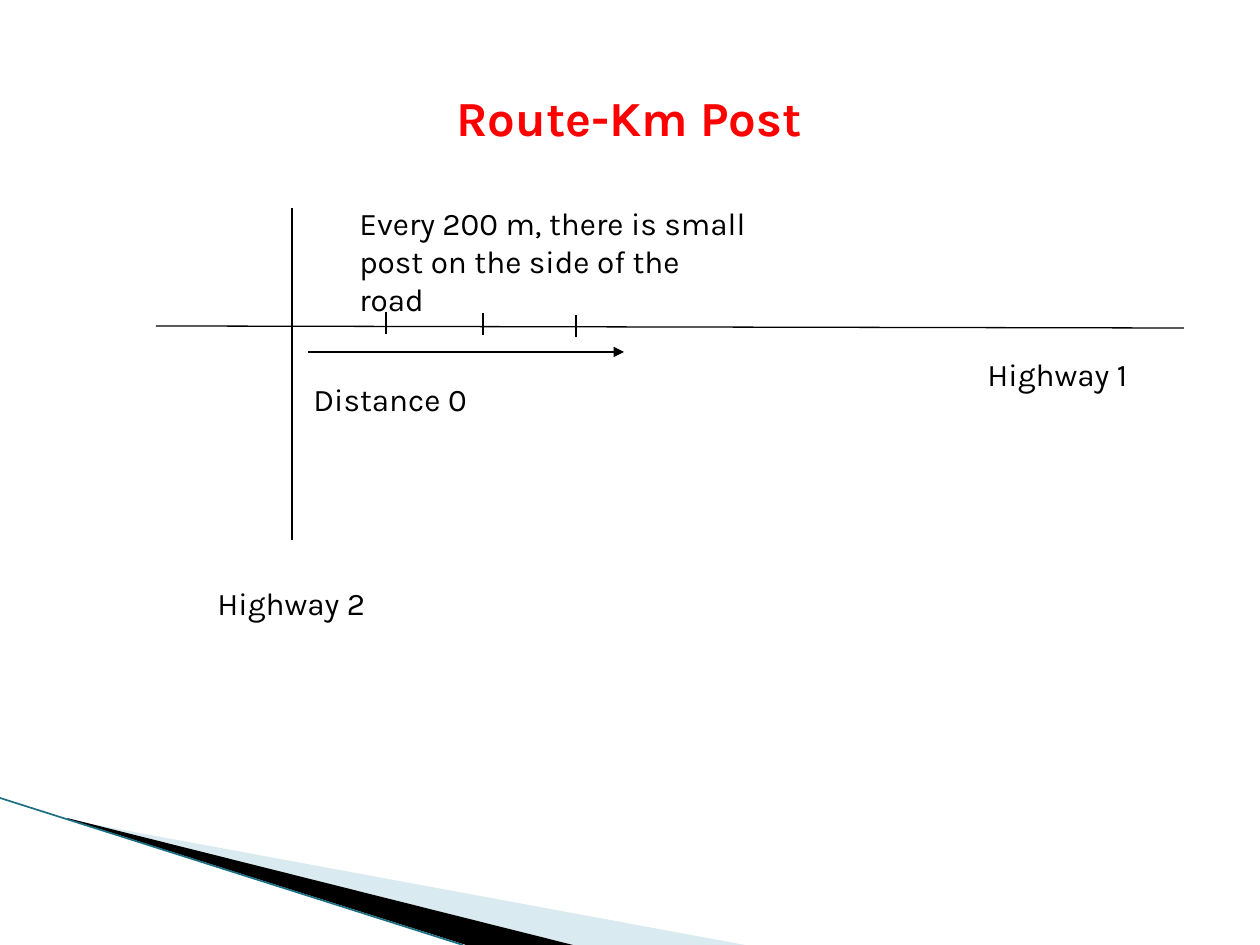
import pptx
import pptx.util
import pptx.dml.color
import pptx.enum.shapes
import pptx.enum.text
from dataclasses import dataclass
from lxml import etree

EMU_PER_PX = 914400 / 126
A_NS = "http://schemas.openxmlformats.org/drawingml/2006/main"


@dataclass(frozen=True)
class Theme:
    font: str = "Karla"
    title_size: int = 28
    label_size: int = 18
    title: str = "FF0000"
    ink: str = "000000"
    pale_wedge: str = "A0CBDC"
    edge: str = "1B6F83"
    road_width: float = 0.75
    edge_width: float = 0.95


THEME = Theme()


def px(length):
    return pptx.util.Emu(round(length * EMU_PER_PX))


def rgb(color):
    return pptx.dml.color.RGBColor.from_string(color)


def add_wedge(slide, points, color, alpha=None):
    builder = slide.shapes.build_freeform(*points[0], scale=EMU_PER_PX)
    builder.add_line_segments(points[1:], close=True)
    wedge = builder.convert_to_shape()
    wedge.shadow.inherit = False
    wedge.fill.solid()
    wedge.fill.fore_color.rgb = rgb(color)
    wedge.line.fill.background()
    if alpha is not None:
        fill_color = wedge.fill._xPr.find(f".//{{{A_NS}}}srgbClr")
        etree.SubElement(fill_color, f"{{{A_NS}}}alpha", val=str(alpha * 1000))


def add_line(slide, start, end, color=THEME.ink, width=THEME.road_width, arrow=False):
    line = slide.shapes.add_connector(
        pptx.enum.shapes.MSO_CONNECTOR.STRAIGHT, *map(px, start + end))
    line.line.color.rgb = rgb(color)
    line.line.width = pptx.util.Pt(width)
    if arrow:
        etree.SubElement(line.line._get_or_add_ln(), f"{{{A_NS}}}tailEnd", type="triangle")
    etree.SubElement(line._element.spPr, f"{{{A_NS}}}effectLst")


def write_text(shape, text, size, color, bold=False, align=pptx.enum.text.PP_ALIGN.LEFT):
    frame = shape.text_frame
    frame.text = text
    frame.word_wrap = True
    frame.auto_size = pptx.enum.text.MSO_AUTO_SIZE.NONE
    frame.vertical_anchor = pptx.enum.text.MSO_ANCHOR.TOP
    paragraph = frame.paragraphs[0]
    paragraph.alignment = align
    paragraph.space_before = pptx.util.Pt(0)
    font = paragraph.runs[0].font
    font.name = THEME.font
    font.size = pptx.util.Pt(size)
    font.bold = bold
    font.color.rgb = rgb(color)


def add_title(slide, text, left, top, width, height):
    title = slide.shapes.title
    title.left, title.top, title.width, title.height = map(px, (left, top, width, height))
    write_text(title, text, THEME.title_size, THEME.title, True,
               pptx.enum.text.PP_ALIGN.CENTER)


def add_label(slide, text, left, top, width=212, height=50):
    label = slide.shapes.add_textbox(*map(px, (left, top, width, height)))
    write_text(label, text, THEME.label_size, THEME.ink)


def main():
    deck = pptx.Presentation()
    deck.slide_width, deck.slide_height = px(1260), px(945)
    slide = deck.slides.add_slide(deck.slide_layouts[5])

    # Corner decoration
    add_wedge(slide, [(69, 820), (745, 945), (573, 945), (69, 819)], THEME.pale_wedge, 40)
    add_wedge(slide, [(67, 818), (573, 945), (466, 945), (68, 819)], THEME.ink)
    add_line(slide, (0, 798), (463, 945), THEME.edge, THEME.edge_width)

    add_title(slide, "Route-Km Post", 278, 81, 702, 72)

    # Highways and direction of distance
    add_line(slide, (156, 326), (1184, 328))
    add_line(slide, (292, 208), (292, 540))
    add_line(slide, (308, 352), (624, 352), arrow=True)

    # Posts along Highway 1
    for post_x, post_top in ((386, 312), (483, 313), (576, 315)):
        add_line(slide, (post_x, post_top), (post_x, post_top + 22))

    # Labels
    add_label(slide, "Distance 0", 301, 374)
    add_label(slide, "Every 200 m, there is small post on the side of the road",
              347, 198, 413, 88)
    add_label(slide, "Highway 2", 205, 578)
    add_label(slide, "Highway 1", 975, 349)

    deck.save("out.pptx")


if __name__ == "__main__":
    main()
